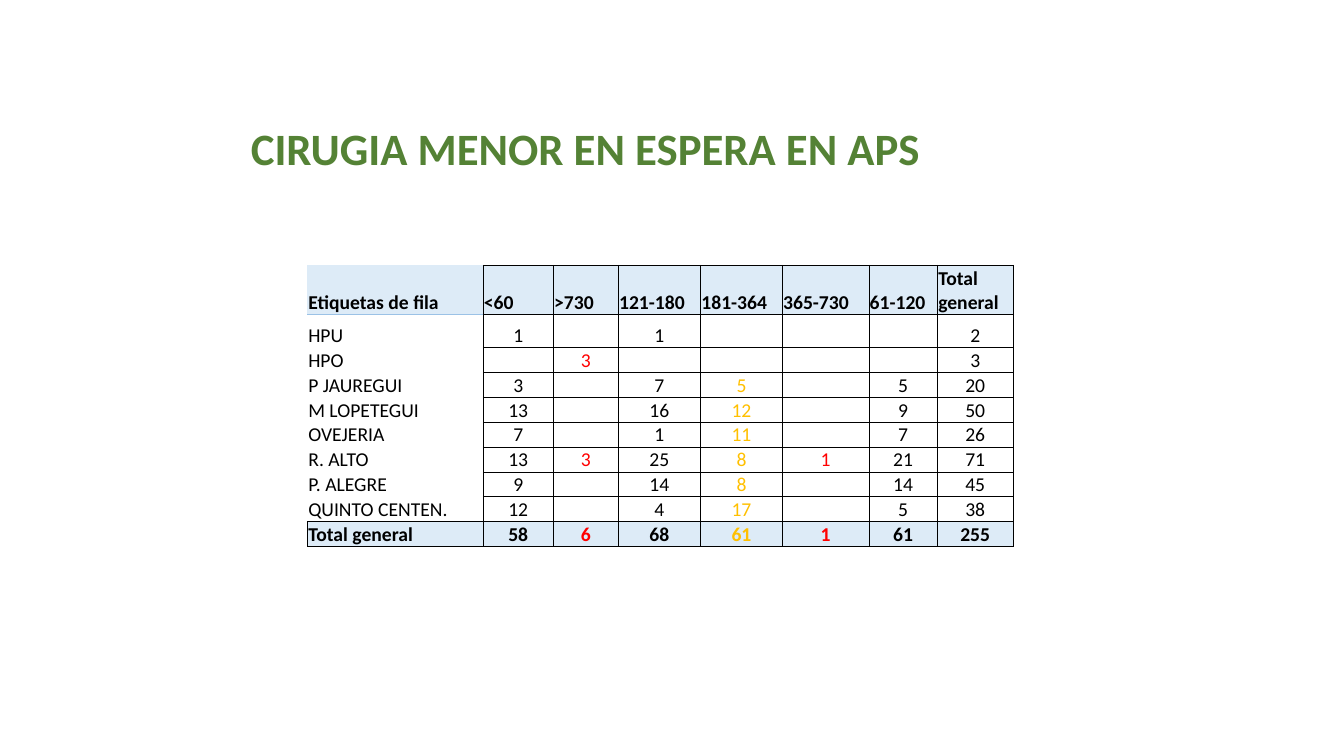
"""Build the slide on minor surgery waiting lists in primary care."""
from lxml import etree
from pptx import Presentation
from pptx.dml.color import RGBColor
from pptx.enum import text as t
from pptx.oxml.ns import qn
from pptx.util import Pt

COLORS = {"title": "548235", "black": "000000", "red": "FF0000",
          "amber": "FFC000", "band": "DDEBF7", "rule": "9BC2E6"}
COLUMN_COLORS = {2: "red", 4: "amber", 5: "red"}
COLUMN_WIDTHS = [125.5, 50.2, 46.4, 58.8, 58.4, 61.8, 49, 54]
ROW_HEIGHTS = [35.4, 23.6] + [17.76] * 8
ROWS = [
    ["Etiquetas de fila", "<60", ">730", "121-180", "181-364", "365-730", "61-120", "Total general"],
    ["HPU", "1", "", "1", "", "", "", "2"],
    ["HPO", "", "3", "", "", "", "", "3"],
    ["P JAUREGUI", "3", "", "7", "5", "", "5", "20"],
    ["M LOPETEGUI", "13", "", "16", "12", "", "9", "50"],
    ["OVEJERIA", "7", "", "1", "11", "", "7", "26"],
    ["R. ALTO", "13", "3", "25", "8", "1", "21", "71"],
    ["P. ALEGRE", "9", "", "14", "8", "", "14", "45"],
    ["QUINTO CENTEN.", "12", "", "4", "17", "", "5", "38"],
    ["Total general", "58", "6", "68", "61", "1", "61", "255"],
]
LAST_ROW = len(ROWS) - 1


def write_text(frame, content, size=14, color="black", bold=False, align=t.PP_ALIGN.LEFT):
    paragraph = frame.paragraphs[0]
    paragraph.alignment = align
    if not content:
        etree.SubElement(paragraph._p, qn("a:endParaRPr"), sz=str(size * 100))
        return paragraph
    run = paragraph.add_run()
    run.text = content
    run.font.name = "Calibri"
    run.font.size = Pt(size)
    run.font.bold = bold
    run.font.color.rgb = RGBColor.from_string(COLORS[color])
    return paragraph


def border_colors(row, column):
    borders = dict.fromkeys("LRTB", "black")
    if column == 0 and row < LAST_ROW:
        borders.update(L=None, T="rule" if row == 1 else None,
                       B={0: "rule", LAST_ROW - 1: "black"}.get(row))
    return borders


def set_borders(cell, borders):
    properties = cell._tc.get_or_add_tcPr()
    for index, (side, color) in enumerate(borders.items()):
        line = etree.Element(qn(f"a:ln{side}"), w=str(Pt(0.5)))
        if color:
            fill = etree.SubElement(line, qn("a:solidFill"))
            etree.SubElement(fill, qn("a:srgbClr"), val=COLORS[color])
        else:
            etree.SubElement(line, qn("a:noFill"))
        properties.insert(index, line)


def format_cell(cell, content, row, column):
    banded = row in (0, LAST_ROW)
    centered = row > 0 and column > 0
    cell.margin_left = cell.margin_right = cell.margin_top = Pt(0.6)
    cell.margin_bottom = Pt(0)
    cell.vertical_anchor = t.MSO_ANCHOR.BOTTOM
    if banded:
        cell.fill.solid()
        cell.fill.fore_color.rgb = RGBColor.from_string(COLORS["band"])
    else:
        cell.fill.background()
    write_text(cell.text_frame, content, bold=banded,
               color=COLUMN_COLORS.get(column, "black") if row else "black",
               align=t.PP_ALIGN.CENTER if centered else t.PP_ALIGN.LEFT)
    set_borders(cell, border_colors(row, column))


def add_title(slide, content):
    title = slide.shapes.title
    title.left, title.top, title.width, title.height = Pt(8), Pt(55.4), Pt(828), Pt(104.4)
    title.text_frame.vertical_anchor = t.MSO_ANCHOR.MIDDLE
    paragraph = write_text(title.text_frame, content, size=32, color="title",
                           bold=True, align=t.PP_ALIGN.CENTER)
    paragraph.line_spacing = 0.9


def add_waiting_table(slide):
    frame = slide.shapes.add_table(len(ROWS), len(COLUMN_WIDTHS), Pt(219.6), Pt(189.4),
                                   Pt(sum(COLUMN_WIDTHS)), Pt(sum(ROW_HEIGHTS)))
    table = frame.table
    table.first_row = table.horz_banding = False
    for column, width in zip(table.columns, COLUMN_WIDTHS):
        column.width = Pt(width)
    for row, height in zip(table.rows, ROW_HEIGHTS):
        row.height = Pt(height)
    for row, values in enumerate(ROWS):
        for column, value in enumerate(values):
            format_cell(table.cell(row, column), value, row, column)


def main():
    presentation = Presentation()
    presentation.slide_width, presentation.slide_height = Pt(960), Pt(540)
    slide = presentation.slides.add_slide(presentation.slide_layouts[5])
    add_title(slide, "CIRUGIA MENOR EN ESPERA EN APS ")
    add_waiting_table(slide)
    presentation.save("out.pptx")


if __name__ == "__main__":
    main()
